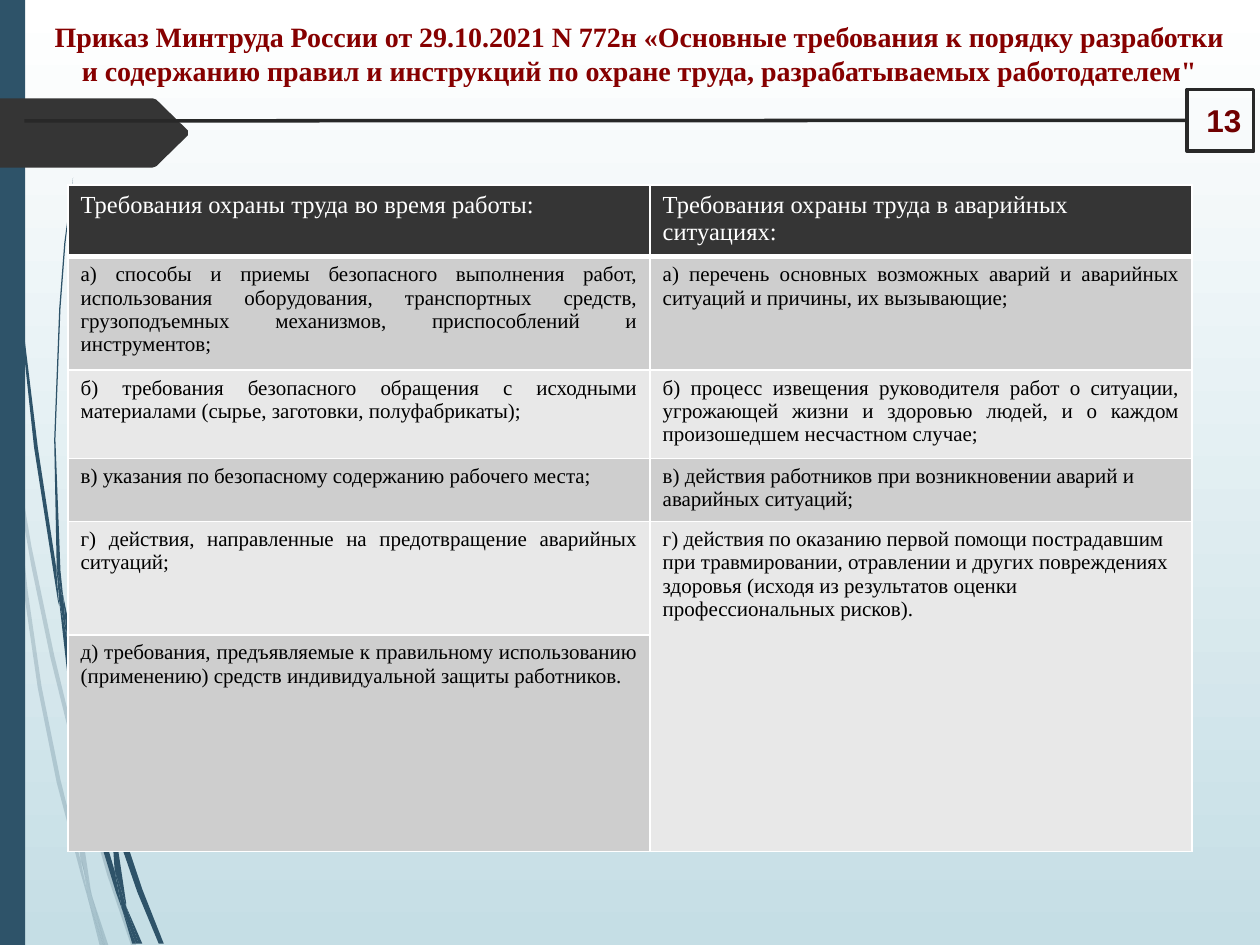
from lxml import etree
from pptx import Presentation
from pptx.dml.color import RGBColor
from pptx.enum.shapes import MSO_SHAPE
from pptx.enum.text import PP_ALIGN as ALIGN
from pptx.oxml.ns import qn
from pptx.util import Inches, Pt

BLUE, DARK, WHITE = "2E5369", "353535", "FFFFFF"
SERIF = "Times New Roman"

# Outlines of the stems in inches, measured from the slide corner.
PALE_STEMS = [
    [(0.08, 3.5), (0.06, 3.22), (0, 2.82), (0, 2.99), (0.07, 3.44)],
    [(0.4, 5.22), (0.59, 5.99), (0.59, 5.86), (0.43, 5.2), (0.25, 4.34), (0.1, 3.45),
     (0.12, 3.76), (0.25, 4.5)],
    [(0.64, 6.07), (0.61, 5.96), (0.61, 6.1), (0.85, 6.94), (1.04, 7.5), (1.08, 7.5), (0.88, 6.92)],
    [(0.83, 7.5), (0.86, 7.5), (0.73, 7.11)],
    [(0.64, 6.83), (0.48, 6.19), (0.33, 5.45), (0.22, 4.69), (0.12, 3.76), (0.08, 3.5),
     (0.19, 4.7), (0.3, 5.46), (0.45, 6.21), (0.64, 6.93), (0.7, 7.14), (0.69, 7.07)],
    [(0.58, 5.99), (0.6, 6.46), (0.64, 6.83), (0.67, 6.92), (0.73, 7.11), (0.72, 7.06),
     (0.63, 6.46), (0.61, 6.1), (0.61, 6.08)],
    [(0.61, 5.84), (0.65, 5.22), (0.76, 4.62), (0.92, 4.05), (1.11, 3.49), (1.34, 2.95),
     (1.59, 2.45), (1.87, 1.98), (2.01, 1.75), (2.17, 1.54), (2.17, 1.53), (2.01, 1.75),
     (1.86, 1.97), (1.58, 2.44), (1.33, 2.94), (1.1, 3.48), (0.91, 4.04), (0.75, 4.61),
     (0.64, 5.21), (0.59, 5.84), (0.59, 5.86), (0.61, 5.96)],
    [(0.7, 7.14), (0.79, 7.5), (0.82, 7.5)],
    [(0.61, 6.08), (0.61, 6.1), (0.61, 5.96), (0.59, 5.86), (0.58, 5.99)],
    [(0.67, 6.92), (0.65, 6.83), (0.69, 7.07), (0.7, 7.14), (0.82, 7.5), (0.83, 7.5), (0.73, 7.11)],
]
DARK_STEMS = [
    [(0.05, 1.1), (0.14, 2.33), (0.27, 3.55), (0.46, 4.77), (0.47, 4.81), (0.45, 4.57),
     (0.45, 4.53), (0.3, 3.55), (0.15, 2.32), (0.06, 1.09), (0.04, 0.48), (0.03, 0), (0.02, 0),
     (0.03, 0.48)],
    [(0.73, 5.92), (0.88, 6.45), (0.88, 6.31), (0.77, 5.9), (0.62, 5.32), (0.5, 4.72),
     (0.53, 5.05), (0.62, 5.49)],
    [(0.94, 6.49), (0.91, 6.41), (0.91, 6.56), (1.09, 7.08), (1.26, 7.49), (1.3, 7.49), (1.13, 7.06)],
    [(0.91, 6.91), (0.81, 6.57), (0.69, 6.07), (0.6, 5.56), (0.53, 5.05), (0.47, 4.77),
     (0.56, 5.57), (0.65, 6.08), (0.77, 6.59), (0.92, 7.08), (0.97, 7.22), (0.96, 7.17)],
    [(0.5, 4.72), (0.48, 4.53), (0.44, 3.49), (0.48, 2.45), (0.52, 1.93), (0.58, 1.41),
     (0.51, 1.93), (0.47, 2.45), (0.43, 3.49), (0.45, 4.49), (0.49, 4.72)],
    [(1.1, 7.49), (1.13, 7.49), (1, 7.19)],
    [(0.47, 4.77), (0.53, 5.05), (0.5, 4.72), (0.49, 4.72), (0.45, 4.49), (0.45, 4.53)],
    [(0.91, 6.33), (0.94, 5.92), (1.03, 5.52), (1.15, 5.13), (1.31, 4.76), (1.69, 4.06),
     (1.91, 3.74), (2.03, 3.59), (2.16, 3.44), (2.15, 3.44), (2.03, 3.58), (1.91, 3.73),
     (1.68, 4.05), (1.29, 4.74), (1.13, 5.12), (1.01, 5.51), (0.92, 5.91), (0.88, 6.31),
     (0.91, 6.41)],
    [(0.97, 7.22), (1.05, 7.49), (1.08, 7.49)],
    [(0.88, 6.45), (0.91, 6.91), (0.96, 7.06), (1, 7.19), (1, 7.16), (0.91, 6.56), (0.9, 6.51)],
    [(0.88, 6.45), (0.9, 6.51), (0.91, 6.56), (0.91, 6.41), (0.88, 6.31)],
    [(0.96, 7.06), (0.91, 6.91), (0.96, 7.17), (0.97, 7.22), (1.08, 7.49), (1.1, 7.49), (1, 7.19)],
]

TITLE = ("Приказ Минтруда России от 29.10.2021 N 772н «Основные требования к порядку разработки "
         "и содержанию правил и инструкций по охране труда, разрабатываемых работодателем\"")
ROWS = [
    ("Требования охраны труда во время работы:",
     "Требования охраны труда в аварийных ситуациях:"),
    ("а) способы и приемы безопасного выполнения работ, использования оборудования, транспортных "
     "средств, грузоподъемных механизмов, приспособлений и инструментов;",
     "а) перечень основных возможных аварий и аварийных ситуаций и причины, их вызывающие;"),
    ("б) требования безопасного обращения с исходными материалами (сырье, заготовки, полуфабрикаты);",
     "б) процесс извещения руководителя работ о ситуации, угрожающей жизни и здоровью людей, "
     "и о каждом произошедшем несчастном случае;"),
    ("в) указания по безопасному содержанию рабочего места;",
     "в) действия работников при возникновении аварий и аварийных ситуаций;"),
    ("г) действия, направленные на предотвращение аварийных ситуаций;",
     "г) действия по оказанию первой помощи пострадавшим при травмировании, отравлении и других "
     "повреждениях здоровья (исходя из результатов оценки профессиональных рисков)."),
    ("д) требования, предъявляемые к правильному использованию (применению) средств "
     "индивидуальной защиты работников.", ""),
]
COLUMN_WIDTHS = [4.62, 4.3]
ROW_HEIGHTS = [0.48, 0.51, 0.59, 0.48, 0.9, 1.72]


def rgb(color):
    return RGBColor.from_string(color)


def paint(shape, color):
    shape.shadow.inherit = False
    shape.fill.solid()
    shape.fill.fore_color.rgb = rgb(color)
    shape.line.fill.background()


def add_outline(shapes, points, color):
    corners = [(Inches(x), Inches(y)) for x, y in points]
    builder = shapes.build_freeform(*corners[0])
    builder.add_line_segments(corners[1:], close=True)
    shape = builder.convert_to_shape()
    paint(shape, color)
    return shape


def add_stems(slide, stems, opacity=100):
    group = slide.shapes.add_group_shape()
    for points in stems:
        stem = add_outline(group.shapes, points, BLUE)
        if opacity < 100:
            color = stem.fill._xPr.find(qn("a:solidFill"))[0]
            etree.SubElement(color, qn("a:alpha"), val=str(opacity * 1000))


def add_backdrop(slide, height):
    fill = slide.background.fill
    fill.gradient()
    fill.gradient_angle = 270
    for stop, color in zip(fill.gradient_stops, (WHITE, "C5DEE5")):
        stop.color.rgb = rgb(color)
    add_stems(slide, PALE_STEMS, opacity=20)
    add_stems(slide, DARK_STEMS)
    paint(slide.shapes.add_shape(MSO_SHAPE.RECTANGLE, 0, 0, Inches(0.2), height), BLUE)


def add_arrow_tag(slide, left, top, width, height):
    shoulder, right, bottom = left + width - 0.25, left + width, top + height
    middle = top + height / 2
    add_outline(slide.shapes, [
        (left, top), (shoulder - 0.03, top), (shoulder, top + 0.01), (right, middle - 0.02),
        (right, middle + 0.02), (shoulder, bottom - 0.01), (shoulder - 0.03, bottom),
        (left, bottom)], DARK)


def add_text(slide, left, top, width, height, text, font, size, color, alignment):
    box = slide.shapes.add_textbox(Inches(left), Inches(top), Inches(width), Inches(height))
    box.text_frame.word_wrap = True
    paragraph = box.text_frame.paragraphs[0]
    paragraph.text = text
    paragraph.alignment = alignment
    paragraph.font.name, paragraph.font.size, paragraph.font.bold = font, Pt(size), True
    paragraph.font.color.rgb = rgb(color)
    return paragraph


def add_page_number(slide, left, top, width, height):
    """Framed number whose callout line runs left across the slide."""
    frame = slide.shapes.add_shape(MSO_SHAPE.LINE_CALLOUT_1, Inches(left), Inches(top),
                                   Inches(width), Inches(height))
    for index, value in enumerate((0.5, -0.01, 0.51, -17.41)):
        frame.adjustments[index] = value
    frame.shadow.inherit = False
    frame.fill.background()
    frame.line.color.rgb = rgb("282828")
    frame.line.width = Pt(2)
    add_text(slide, left, top + 0.04, width, 0.4, "13", "Arial", 18, "700000", ALIGN.RIGHT)


def set_borders(cell, bottom):
    properties = cell._tc.get_or_add_tcPr()
    for side, points in (("L", 1), ("R", 1), ("T", 1), ("B", bottom)):
        line = etree.SubElement(properties, qn(f"a:ln{side}"), w=str(Pt(points)))
        fill = etree.SubElement(line, qn("a:solidFill"))
        etree.SubElement(fill, qn("a:srgbClr"), val=WHITE)


def add_requirements_table(slide, left, top):
    table = slide.shapes.add_table(
        len(ROWS), len(COLUMN_WIDTHS), Inches(left), Inches(top),
        Inches(sum(COLUMN_WIDTHS)), Inches(sum(ROW_HEIGHTS))).table
    for column, width in zip(table.columns, COLUMN_WIDTHS):
        column.width = Inches(width)
    for row_index, (row, height) in enumerate(zip(table.rows, ROW_HEIGHTS)):
        row.height = Inches(height)
        header = row_index == 0
        for column_index, cell in enumerate(row.cells):
            set_borders(cell, 3 if header else 1)
            cell.fill.solid()
            band = "CECECE" if row_index % 2 else "E8E8E8"
            cell.fill.fore_color.rgb = rgb(DARK if header else band)
            paragraph = cell.text_frame.paragraphs[0]
            paragraph.text = ROWS[row_index][column_index]
            paragraph.font.name = SERIF
            paragraph.font.size = Pt(14 if header else 12)
            paragraph.font.bold = False
            paragraph.font.color.rgb = rgb(WHITE if header else "000000")
            if not header and (column_index == 0 or row_index < 3):
                paragraph.alignment = ALIGN.JUSTIFY
    table.cell(4, 1).merge(table.cell(5, 1))


def main():
    presentation = Presentation()
    presentation.slide_width, presentation.slide_height = Inches(10), Inches(7.5)
    slide = presentation.slides.add_slide(presentation.slide_layouts[6])
    add_backdrop(slide, presentation.slide_height)
    add_arrow_tag(slide, 0, 0.78, 1.49, 0.55)
    add_page_number(slide, 9.42, 0.71, 0.53, 0.49)
    title = add_text(slide, 0.29, 0.11, 9.57, 0.64, TITLE, SERIF, 16, "860000", ALIGN.CENTER)
    title.space_before = Pt(3.2)
    add_requirements_table(slide, 0.54, 1.47)
    presentation.save("out.pptx")


if __name__ == "__main__":
    main()
